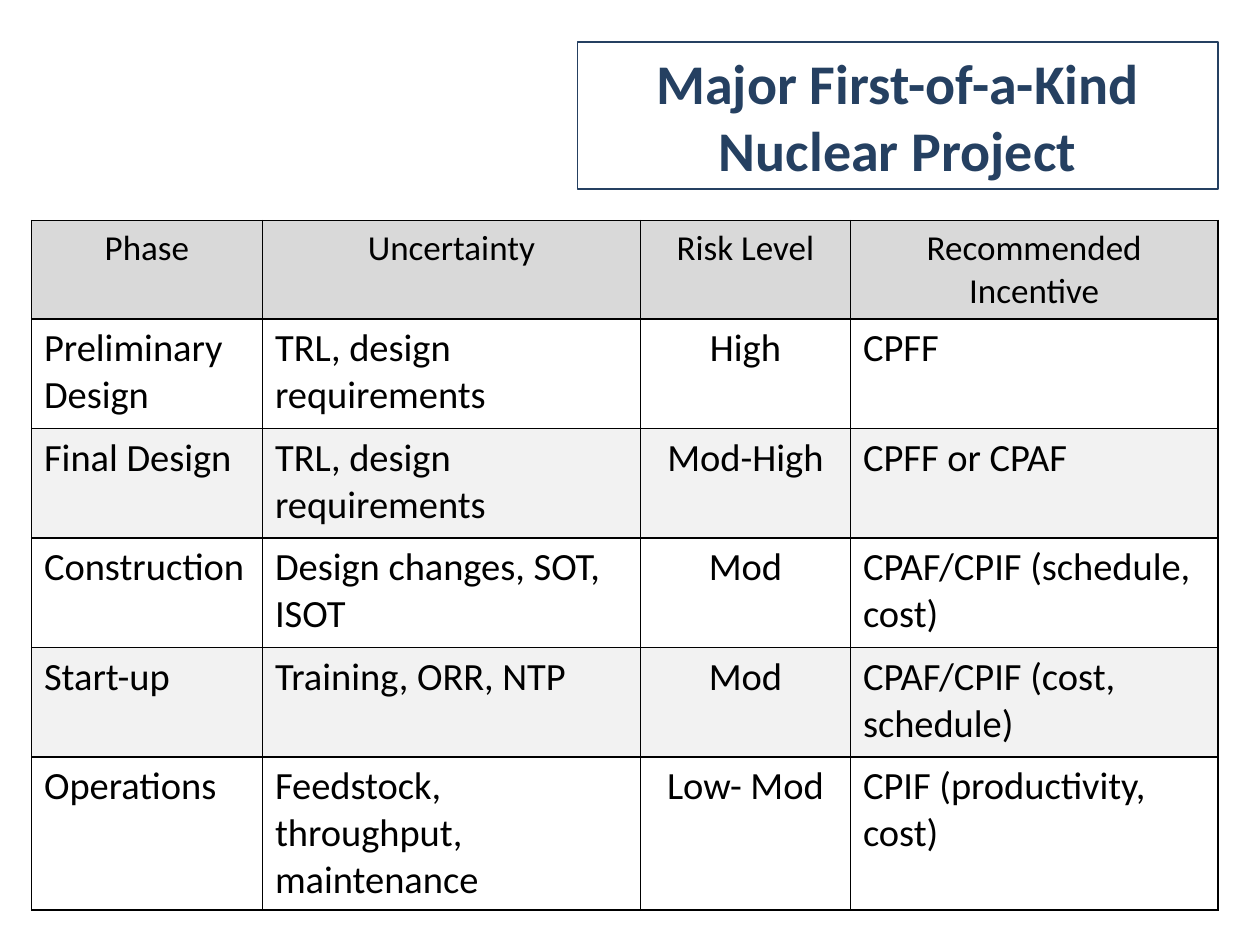
from pptx import Presentation
from pptx.dml.color import RGBColor as RGB
from pptx.enum.shapes import MSO_SHAPE as SHAPE
from pptx.enum.text import MSO_ANCHOR as ANCHOR, PP_ALIGN as ALIGN
from pptx.oxml.ns import qn
from pptx.util import Pt
from lxml import etree

COLORS = {
    "navy": "254061",
    "black": "000000",
    "white": "FFFFFF",
    "header": "D9D9D9",
    "band": "F2F2F2",
}


class Deck:
    font = "Calibri"

    def __init__(self, width, height):
        self.prs = Presentation()
        self.prs.slide_width, self.prs.slide_height = Pt(width), Pt(height)
        self.slide = self.prs.slides.add_slide(self.prs.slide_layouts[6])

    def color(self, name):
        return RGB.from_string(COLORS[name])

    def set_text(self, tf, text, size, color, align, bold=False):
        tf.text = text
        for p in tf.paragraphs:
            p.alignment = align
            for r in p.runs:
                r.font.name, r.font.size, r.font.bold = self.font, Pt(size), bold
                r.font.color.rgb = self.color(color)

    def title_box(self, text, x, y, w, h):
        sp = self.slide.shapes.add_shape(
            SHAPE.RECTANGLE, Pt(x), Pt(y), Pt(w), Pt(h))
        sp.shadow.inherit = False
        sp.fill.solid()
        sp.fill.fore_color.rgb = self.color("white")
        sp.line.color.rgb = self.color("navy")
        sp.line.width = Pt(0.75)
        tf = sp.text_frame
        tf.word_wrap = True
        tf.vertical_anchor = ANCHOR.MIDDLE
        self.set_text(tf, text, 32, "navy", ALIGN.CENTER, bold=True)

    def borders(self, cell):
        # Borders must come before the fill in the cell properties
        tcPr = cell._tc.get_or_add_tcPr()
        for side in ("a:lnL", "a:lnR", "a:lnT", "a:lnB"):
            ln = etree.SubElement(tcPr, qn(side), w=str(Pt(1)))
            fill = etree.SubElement(ln, qn("a:solidFill"))
            etree.SubElement(fill, qn("a:srgbClr"), val=COLORS["black"])

    def table(self, rows, x, y, widths, heights, centered):
        table = self.slide.shapes.add_table(
            len(rows), len(widths), Pt(x), Pt(y),
            Pt(sum(widths)), Pt(sum(heights))).table
        for col, w in zip(table.columns, widths):
            col.width = Pt(w)
        for i, (row, h) in enumerate(zip(rows, heights)):
            table.rows[i].height = Pt(h)
            is_header = i == 0
            fill = "header" if is_header else ("band", "white")[i % 2]
            for j, text in enumerate(row):
                cell = table.cell(i, j)
                self.borders(cell)
                cell.fill.solid()
                cell.fill.fore_color.rgb = self.color(fill)
                middle = is_header or j in centered
                self.set_text(cell.text_frame, text, 20 if is_header else 22,
                              "black", ALIGN.CENTER if middle else ALIGN.LEFT)


PHASES = [
    ("Phase", "Uncertainty", "Risk Level", "Recommended\nIncentive"),
    ("Preliminary\nDesign", "TRL, design requirements", "High", "CPFF"),
    ("Final Design", "TRL, design requirements", "Mod-High", "CPFF or CPAF"),
    ("Construction", "Design changes, SOT, ISOT", "Mod",
     "CPAF/CPIF (schedule, cost)"),
    ("Start-up", "Training, ORR, NTP", "Mod", "CPAF/CPIF (cost, schedule)"),
    ("Operations", "Feedstock, throughput, maintenance", "Low- Mod",
     "CPIF (productivity, cost)"),
]


def main():
    deck = Deck(720, 540)
    # Title
    deck.title_box("Major First-of-a-Kind Nuclear Project", 330, 24, 366, 84)
    # Incentives by project phase
    deck.table(PHASES, 18, 126, widths=[132, 216, 120, 210],
               heights=[48] + [62.6] * 4 + [84], centered={2})
    deck.prs.save("out.pptx")


if __name__ == "__main__":
    main()
